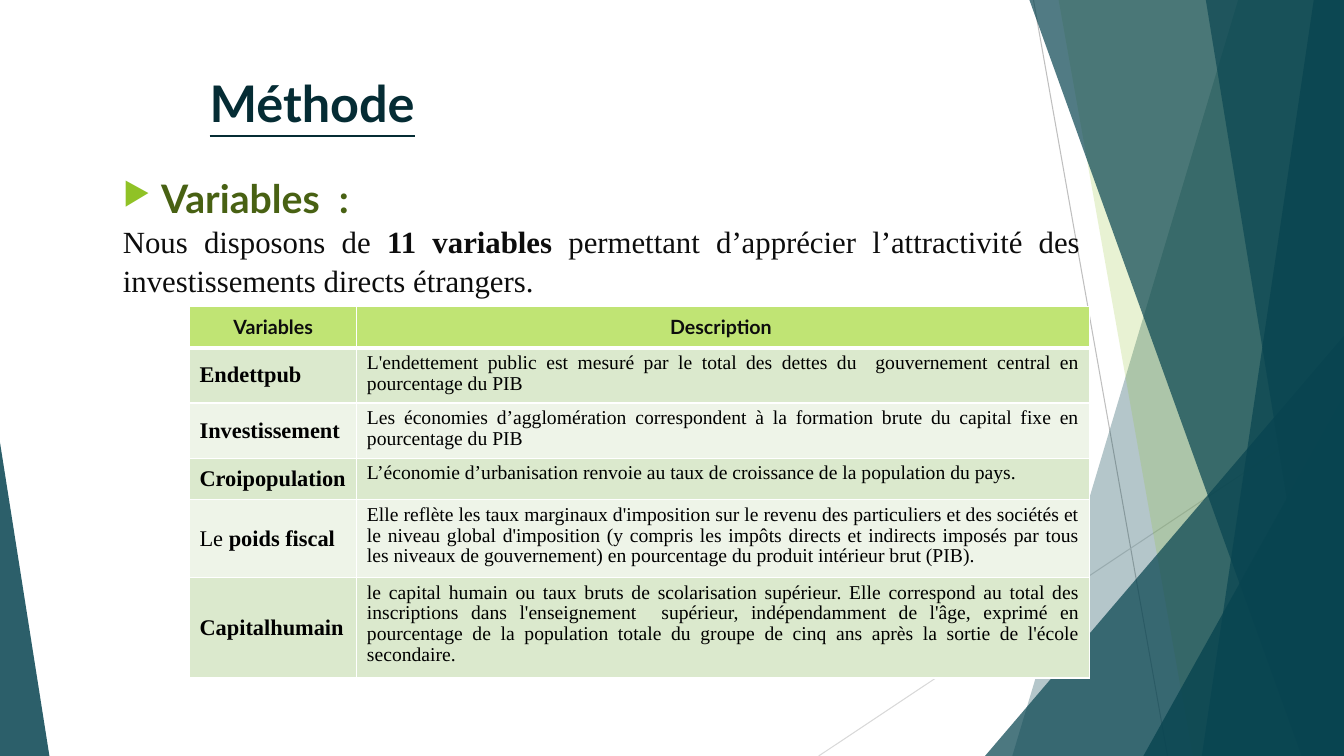
from lxml.etree import SubElement
from pptx import Presentation
from pptx.dml.color import RGBColor
from pptx.enum.shapes import MSO_CONNECTOR, MSO_SHAPE
from pptx.enum.text import MSO_ANCHOR, PP_ALIGN
from pptx.oxml import parse_xml
from pptx.oxml.ns import nsdecls, qn
from pptx.util import Inches, Pt

COLORS = {
    "teal": "084450", "lime": "90C226", "title": "052C34", "heading": "486113",
    "text": "0D0D0D", "black": "000000", "white": "FFFFFF", "header": "C0E474",
    "band_dark": "DBE9CD", "band_light": "EEF4E8",
    "grey": "BFBFBF", "pale_grey": "D9D9D9",
}
SANS, SERIF = "Lato", "Times New Roman"
WIDTH, HEIGHT = 13.33, 7.5

# Polygons of the right-hand decoration: corners, colour, opacity in percent
BACK_FACETS = [
    ([(12.28, 0), (WIDTH, 0), (WIDTH, HEIGHT), (10.04, HEIGHT)], "teal", 30),
    ([(10.5, 0), (WIDTH, 0), (WIDTH, HEIGHT), (11.83, HEIGHT)], "lime", 20),
]
FRONT_FACETS = [
    ([(10.21, 0), (WIDTH, 0), (WIDTH, HEIGHT), (12.91, HEIGHT)], "teal", 70),
    ([(13.03, 0), (WIDTH, 0), (WIDTH, HEIGHT), (11.92, HEIGHT)], "teal", 70),
    ([(11.96, 0), (WIDTH, 0), (WIDTH, HEIGHT), (13.18, HEIGHT)], "teal", 65),
]

# Each name is a list of (text, bold) runs
VARIABLES = [
    ([("Endettpub", True)],
     "L'endettement public est mesuré par le total des dettes du  gouvernement "
     "central en pourcentage du PIB "),
    ([("Investissement", True)],
     "Les économies d’agglomération correspondent à la formation brute du capital "
     "fixe en pourcentage du PIB"),
    ([("Croipopulation", True)],
     "L’économie d’urbanisation renvoie au taux de croissance de la population du pays."),
    ([("Le ", False), ("poids fiscal", True)],
     "Elle reflète les taux marginaux d'imposition sur le revenu des particuliers et "
     "des sociétés et le niveau global d'imposition (y compris les impôts directs et "
     "indirects imposés par tous les niveaux de gouvernement) en pourcentage du "
     "produit intérieur brut (PIB). "),
    ([("Capitalhumain", True)],
     "le capital humain ou taux bruts de scolarisation supérieur. Elle correspond au "
     "total des inscriptions dans l'enseignement  supérieur, indépendamment de l'âge, "
     "exprimé en pourcentage de la population totale du groupe de cinq ans après la "
     "sortie de l'école secondaire."),
]
COLUMN_WIDTHS = [1.66, 7.27]
ROW_HEIGHTS = [0.41, 0.53, 0.53, 0.41, 0.75, 0.95]


def rgb(color):
    return RGBColor.from_string(COLORS[color])


def write(paragraph, runs, size, color, font=SERIF, align=PP_ALIGN.LEFT,
          underline=False, spacing=None):
    """Fill a paragraph with (text, bold) runs sharing one format."""
    paragraph.alignment = align
    if spacing:
        paragraph.line_spacing = spacing
    for text, bold in runs:
        run = paragraph.add_run()
        run.text = text
        run.font.name = font
        run.font.size = Pt(size)
        run.font.bold = bold
        run.font.underline = underline
        run.font.color.rgb = rgb(color)


def add_bullet(paragraph, char, color, percent, indent):
    props = paragraph._p.get_or_add_pPr()
    props.set("marL", str(Inches(indent)))
    props.set("indent", str(-Inches(indent)))
    SubElement(SubElement(props, qn("a:buClr")), qn("a:srgbClr"), val=COLORS[color])
    SubElement(props, qn("a:buSzPct"), val=str(percent * 1000))
    SubElement(props, qn("a:buChar"), char=char)


class SlideBuilder:
    """Holds the current slide and draws its elements in the deck's style."""

    def __init__(self, slide):
        self.slide = slide
        self.shapes = slide.shapes

    def line(self, start, end, color):
        points = [Inches(v) for v in (*start, *end)]
        connector = self.shapes.add_connector(MSO_CONNECTOR.STRAIGHT, *points)
        connector.line.color.rgb = rgb(color)
        connector.line.width = Pt(0.75)
        SubElement(connector.element.spPr, qn("a:effectLst"))

    def paint(self, shape, color, opacity):
        shape.shadow.inherit = False
        shape.line.fill.background()
        shape.fill.solid()
        shape.fill.fore_color.rgb = rgb(color)
        tint = shape.element.spPr.find(qn("a:solidFill")).find(qn("a:srgbClr"))
        SubElement(tint, qn("a:alpha"), val=str(opacity * 1000))

    def facet(self, corners, color, opacity):
        first, *others = [(Inches(x), Inches(y)) for x, y in corners]
        outline = self.shapes.build_freeform(*first)
        outline.add_line_segments(others, close=True)
        self.paint(outline.convert_to_shape(), color, opacity)

    def corner(self, left, top, width, apex, opacity):
        """Triangle standing on the bottom edge, apex 0 at left or 1 at right."""
        triangle = self.shapes.add_shape(
            MSO_SHAPE.ISOSCELES_TRIANGLE, Inches(left), Inches(top),
            Inches(width), Inches(HEIGHT - top))
        triangle.adjustments[0] = apex
        self.paint(triangle, "teal", opacity)

    def text_frame(self, left, top, width, height):
        box = self.shapes.add_textbox(
            Inches(left), Inches(top), Inches(width), Inches(height))
        box.text_frame.word_wrap = True
        return box.text_frame

    def cell(self, cell, runs, fill, size, bottom=1, anchor=MSO_ANCHOR.MIDDLE, **style):
        cell.vertical_anchor = anchor
        cell.margin_right = Inches(0.07 if size == 16 else 0.1)
        cell.fill.solid()
        cell.fill.fore_color.rgb = rgb(fill)
        props = cell._tc.get_or_add_tcPr()
        for place, (side, width) in enumerate(
                [("L", 1), ("R", 1), ("T", 1), ("B", bottom)]):
            props.insert(place, parse_xml(
                f'<a:ln{side} {nsdecls("a")} w="{Pt(width)}"><a:solidFill>'
                f'<a:srgbClr val="{COLORS["white"]}"/></a:solidFill></a:ln{side}>'))
        write(cell.text_frame.paragraphs[0], runs, size, **style)

    def variable_table(self, left, top):
        table = self.shapes.add_table(
            len(ROW_HEIGHTS), len(COLUMN_WIDTHS), Inches(left), Inches(top),
            Inches(sum(COLUMN_WIDTHS)), Inches(sum(ROW_HEIGHTS))).table
        for column, width in zip(table.columns, COLUMN_WIDTHS):
            column.width = Inches(width)
        for row, height in zip(table.rows, ROW_HEIGHTS):
            row.height = Inches(height)
        for index, label in enumerate(["Variables", "Description "]):
            self.cell(table.cell(0, index), [(label, True)], "header", 14, bottom=3,
                      color="text", font=SANS, align=PP_ALIGN.CENTER)
        for index, (name, description) in enumerate(VARIABLES, start=1):
            band = "band_dark" if index % 2 else "band_light"
            self.cell(table.cell(index, 0), name, band, 16, color="black")
            self.cell(table.cell(index, 1), [(description, False)], band, 14,
                      anchor=MSO_ANCHOR.TOP, color="black",
                      align=PP_ALIGN.JUSTIFY, spacing=0.96)


def main():
    deck = Presentation()
    deck.slide_width, deck.slide_height = Inches(WIDTH), Inches(HEIGHT)
    method = SlideBuilder(deck.slides.add_slide(deck.slide_layouts[6]))

    method.line((10.25, 0), (11.58, HEIGHT), "grey")
    method.line((WIDTH, 4.03), (8.12, HEIGHT), "pale_grey")
    for facet in BACK_FACETS:
        method.facet(*facet)
    method.corner(9.77, 3.33, 3.56, apex=1, opacity=72)
    for facet in FRONT_FACETS:
        method.facet(*facet)
    method.corner(11.34, 3.93, 1.99, apex=1, opacity=80)
    method.corner(0, 4.39, 0.49, apex=0, opacity=85)

    title = method.text_frame(1.98, 0.67, 8.16, 0.91)
    write(title.paragraphs[0], [("Méthode", True)], 36, "title", font=SANS, underline=True)

    body = method.text_frame(1.12, 1.68, 9.69, 5.32)
    heading = body.paragraphs[0]
    write(heading, [("Variables  :", True)], 28, "heading", font=SANS)
    add_bullet(heading, "▶", "lime", 80, 0.38)
    write(body.add_paragraph(),
          [("Nous disposons de ", False), ("11 variables ", True),
           ("permettant d’apprécier l’attractivité des investissements directs "
            "étrangers.", False)],
          22, "text", align=PP_ALIGN.JUSTIFY, spacing=1.05)

    method.variable_table(1.88, 3.04)
    deck.save("out.pptx")


if __name__ == "__main__":
    main()
